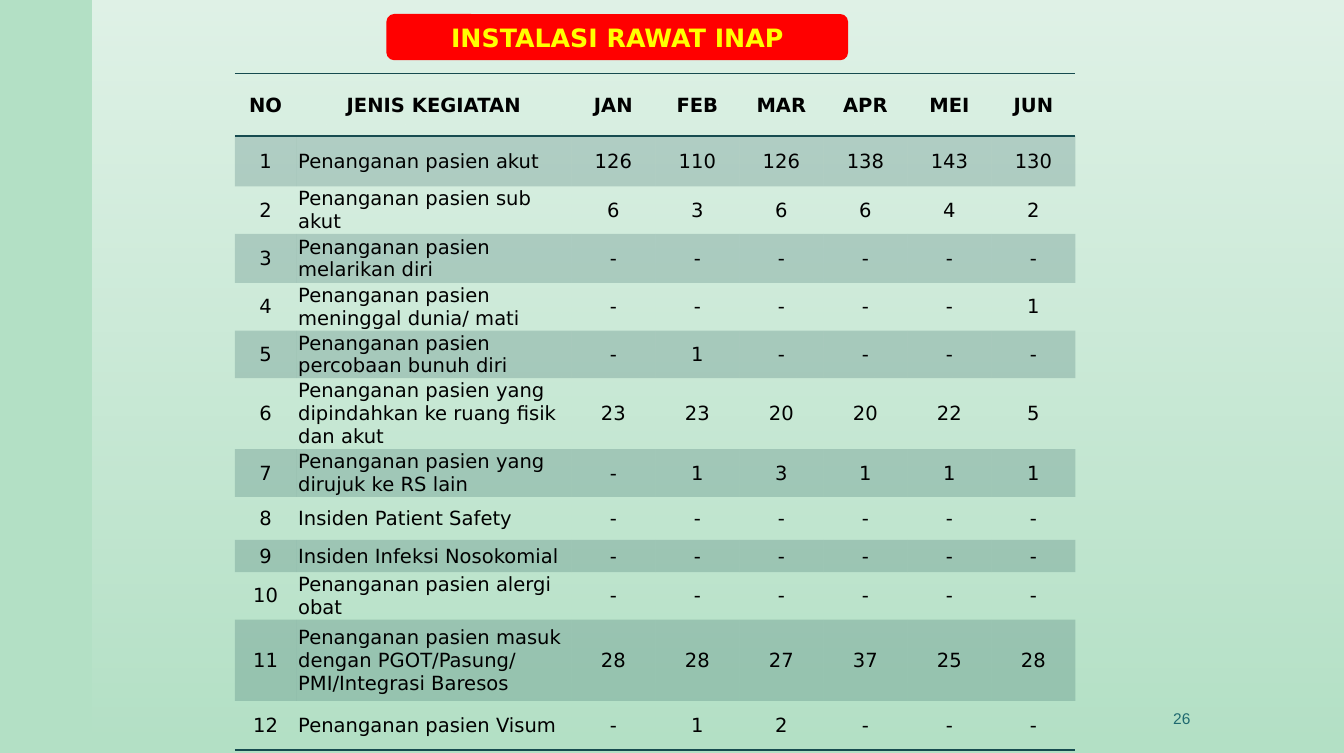
from dataclasses import dataclass
from typing import Any, Optional

from lxml.etree import SubElement
from pptx import Presentation
from pptx.dml.color import RGBColor as Rgb
from pptx.enum.shapes import MSO_SHAPE as Preset
from pptx.enum.text import MSO_ANCHOR as Anchor, PP_ALIGN as Align
from pptx.oxml.ns import qn
from pptx.util import Inches, Pt

SLIDE_WIDTH, SLIDE_HEIGHT = Inches(13.39), Inches(7.5)
COLOURS = {
    "mint": "B3E0C5", "white": "FFFFFF", "red": "FF0000", "yellow": "FFFF00",
    "teal": "1F696F", "dark_teal": "164B4F", "black": "000000",
}
NO_GRID_STYLE = "{2D5ABB26-0587-4C30-8999-92F81FD0307C}"
TABLE_FLAGS = {"first_row": False, "horz_banding": False}
MONTHS = ("JAN", "FEB", "MAR", "APR", "MEI", "JUN")
NUMBER_SHARE, ACTIVITY_SHARE = 7.29, 32.74
MONTH_SHARE = (100 - NUMBER_SHARE - ACTIVITY_SHARE) / len(MONTHS)
HEADER_HEIGHT = 8.27


@dataclass(frozen=True)
class Area:
    left: float
    top: float
    width: float
    height: float

    def box(self) -> tuple[int, int, int, int]:
        return (across(self.left), down(self.top),
                across(self.width), down(self.height))


@dataclass(frozen=True)
class Type:
    size: float
    colour: str
    bold: bool = False
    font: str = "DejaVu Sans"
    align: Any = Align.CENTER


@dataclass(frozen=True)
class Activity:
    label: str
    counts: str
    height: float


PANEL = Area(6.87, 0, 93.13, 100)
TITLE = Area(28.75, 1.87, 34.35, 6.13)
REPORT = Area(17.48, 9.8, 62.55, 90.53)
PAGE_NUMBER = Area(66.02, 92.67, 23.3, 5.33)

HEADING = Type(14, "black", bold=True)
COUNT = Type(14, "black")
LABEL = Type(14, "black", align=Align.LEFT)

ACTIVITIES = (
    Activity("Penanganan pasien akut", "126 110 126 138 143 130", 6.67),
    Activity("Penanganan pasien sub akut", "6 3 6 6 4 2", 5.07),
    Activity("Penanganan pasien melarikan diri", "- - - - - -", 6.53),
    Activity("Penanganan pasien meninggal dunia/ mati", "- - - - - 1", 5.07),
    Activity("Penanganan pasien percobaan bunuh diri", "- 1 - - - -", 4.93),
    Activity("Penanganan pasien yang dipindahkan ke ruang fisik dan akut",
             "23 23 20 20 22 5", 7.33),
    Activity("Penanganan pasien yang dirujuk ke RS lain", "- 1 3 1 1 1", 4.93),
    Activity("Insiden Patient Safety", "- - - - - -", 5.73),
    Activity("Insiden Infeksi Nosokomial", "- - - - - -", 4.27),
    Activity("Penanganan pasien alergi obat", "- - - - - -", 4.93),
    Activity("Penanganan pasien masuk dengan PGOT/Pasung/\vPMI/Integrasi Baresos",
             "28 28 27 37 25 28", 10.8),
    Activity("Penanganan pasien Visum", "- 1 2 - - -", 6.53),
)


def across(percent: float) -> int:
    return round(SLIDE_WIDTH * percent / 100)


def down(percent: float) -> int:
    return round(SLIDE_HEIGHT * percent / 100)


def colour(name: str) -> Rgb:
    return Rgb.from_string(COLOURS[name])


def apply(target: Any, values: dict[str, Any]) -> None:
    for attribute, value in values.items():
        setattr(target, attribute, value)


def write(frame: Any, words: str, style: Type) -> None:
    paragraph = frame.paragraphs[0]
    paragraph.text = words
    paragraph.alignment = style.align
    for run in paragraph.runs:
        apply(run.font, {"name": style.font, "size": Pt(style.size), "bold": style.bold})
        run.font.color.rgb = colour(style.colour)


def set_alpha(colour_element: Any, percent: int) -> None:
    SubElement(colour_element, qn("a:alpha"), val=str(percent * 1000))


def draw_shape(slide: Any, preset: Any, area: Area) -> Any:
    shape = slide.shapes.add_shape(preset, *area.box())
    shape.shadow.inherit = False
    shape.line.fill.background()
    return shape


def draw_panel(slide: Any) -> None:
    panel = draw_shape(slide, Preset.RECTANGLE, PANEL)
    panel.fill.gradient()
    panel.fill.gradient_angle = 270
    for stop, position in zip(panel.fill.gradient_stops, (0, 1)):
        stop.color.rgb = colour("white")
        stop.position = position
    for tint, percent in zip(panel.fill._xPr.iter(qn("a:srgbClr")), (60, 0)):
        set_alpha(tint, percent)


def draw_title(slide: Any) -> None:
    title = draw_shape(slide, Preset.ROUNDED_RECTANGLE, TITLE)
    title.fill.solid()
    title.fill.fore_color.rgb = colour("red")
    apply(title.text_frame, {"word_wrap": True, "vertical_anchor": Anchor.MIDDLE})
    write(title.text_frame, "INSTALASI RAWAT INAP", Type(18.1, "yellow", bold=True))


def draw_page_number(slide: Any) -> None:
    frame = slide.shapes.add_textbox(*PAGE_NUMBER.box()).text_frame
    apply(frame, {"word_wrap": True, "vertical_anchor": Anchor.MIDDLE})
    write(frame, "26", Type(11.1, "teal", font="Arial", align=Align.RIGHT))


def fill_cell(cell: Any, words: str, style: Type, inset: float,
              rules: tuple[str, ...], banded: bool) -> None:
    side = Inches(inset)
    apply(cell, {"vertical_anchor": Anchor.MIDDLE, "margin_left": side,
                 "margin_right": side, "margin_top": Pt(0.5), "margin_bottom": 0})
    write(cell.text_frame, words, style)
    properties = cell._tc.get_or_add_tcPr()
    for rule in rules:
        line = SubElement(properties, qn(f"a:{rule}"), w=str(Pt(1)))
        ink = SubElement(line, qn("a:solidFill"))
        SubElement(ink, qn("a:srgbClr"), val=COLOURS["dark_teal"])
    if banded:
        cell.fill.solid()
        cell.fill.fore_color.rgb = colour("dark_teal")
        set_alpha(properties.find(f"{qn('a:solidFill')}/{qn('a:srgbClr')}"), 20)
    else:
        cell.fill.background()


def fill_row(table: Any, index: int, activity: Optional[Activity]) -> None:
    if activity is None:
        words = ("NO", "JENIS KEGIATAN", *MONTHS)
        rules: tuple[str, ...] = ("lnT", "lnB")
    else:
        words = (str(index), activity.label, *activity.counts.split())
        rules = ("lnB",) if index == len(ACTIVITIES) else ()
    table.rows[index].height = down(activity.height if activity else HEADER_HEIGHT)
    for column, entry in enumerate(words):
        style = HEADING if activity is None else LABEL if column == 1 else COUNT
        inset = 0.02 if activity is None or column < 2 else 0.01
        fill_cell(table.cell(index, column), entry, style, inset, rules, index % 2 == 1)


def draw_report(slide: Any) -> None:
    report = slide.shapes.add_table(len(ACTIVITIES) + 1, len(MONTHS) + 2, *REPORT.box())
    table = report.table
    apply(table, TABLE_FLAGS)
    table._tbl.tblPr.find(qn("a:tableStyleId")).text = NO_GRID_STYLE
    shares = (NUMBER_SHARE, ACTIVITY_SHARE, *[MONTH_SHARE] * len(MONTHS))
    for column, share in zip(table.columns, shares):
        column.width = across(REPORT.width * share / 100)
    for index, activity in enumerate((None, *ACTIVITIES)):
        fill_row(table, index, activity)
    report.height = down(REPORT.height)


def main() -> None:
    deck = Presentation()
    apply(deck, {"slide_width": SLIDE_WIDTH, "slide_height": SLIDE_HEIGHT})
    slide = deck.slides.add_slide(deck.slide_layouts[6])
    slide.background.fill.solid()
    slide.background.fill.fore_color.rgb = colour("mint")
    for draw in (draw_panel, draw_page_number, draw_title, draw_report):
        draw(slide)
    deck.save("out.pptx")


if __name__ == "__main__":
    main()
